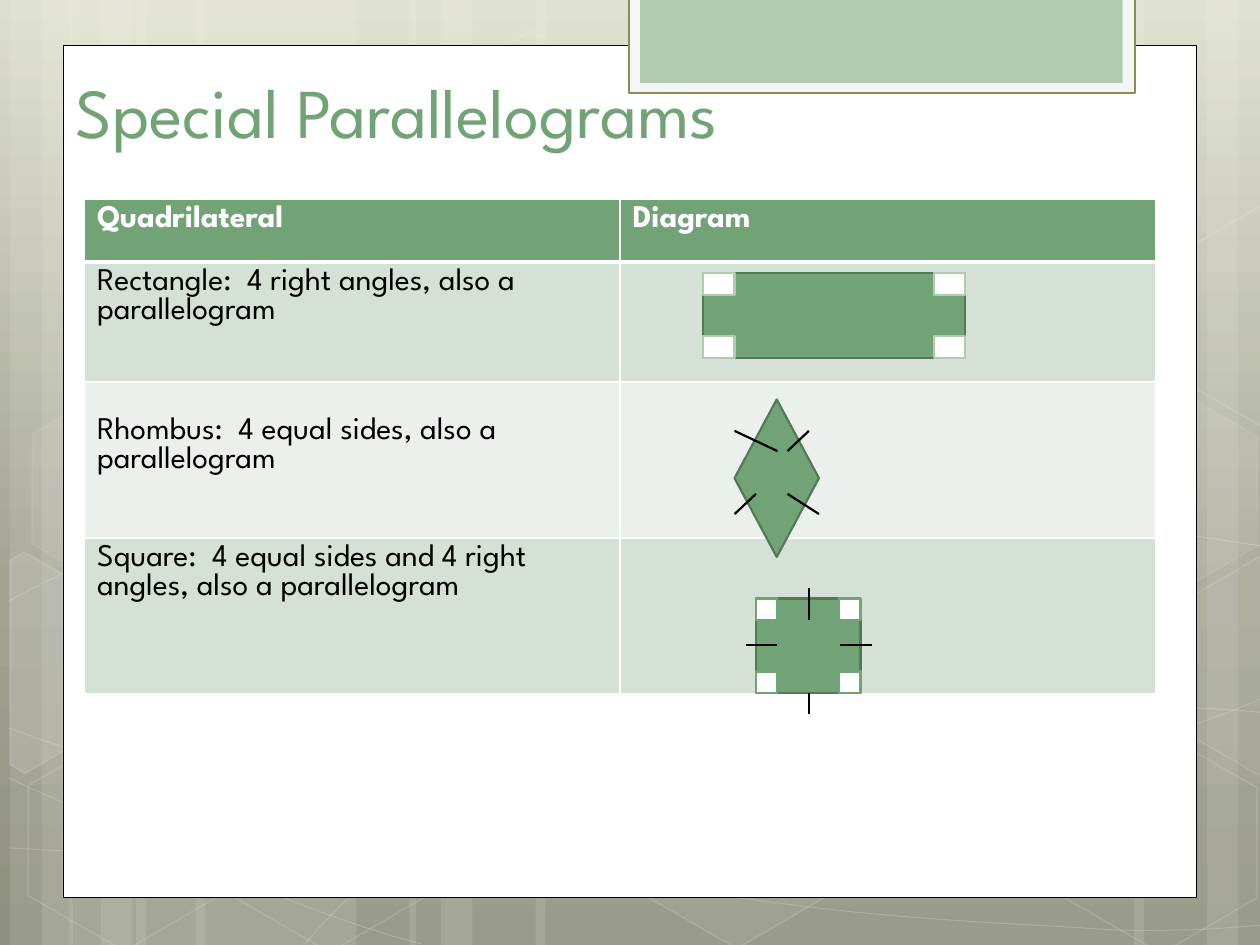
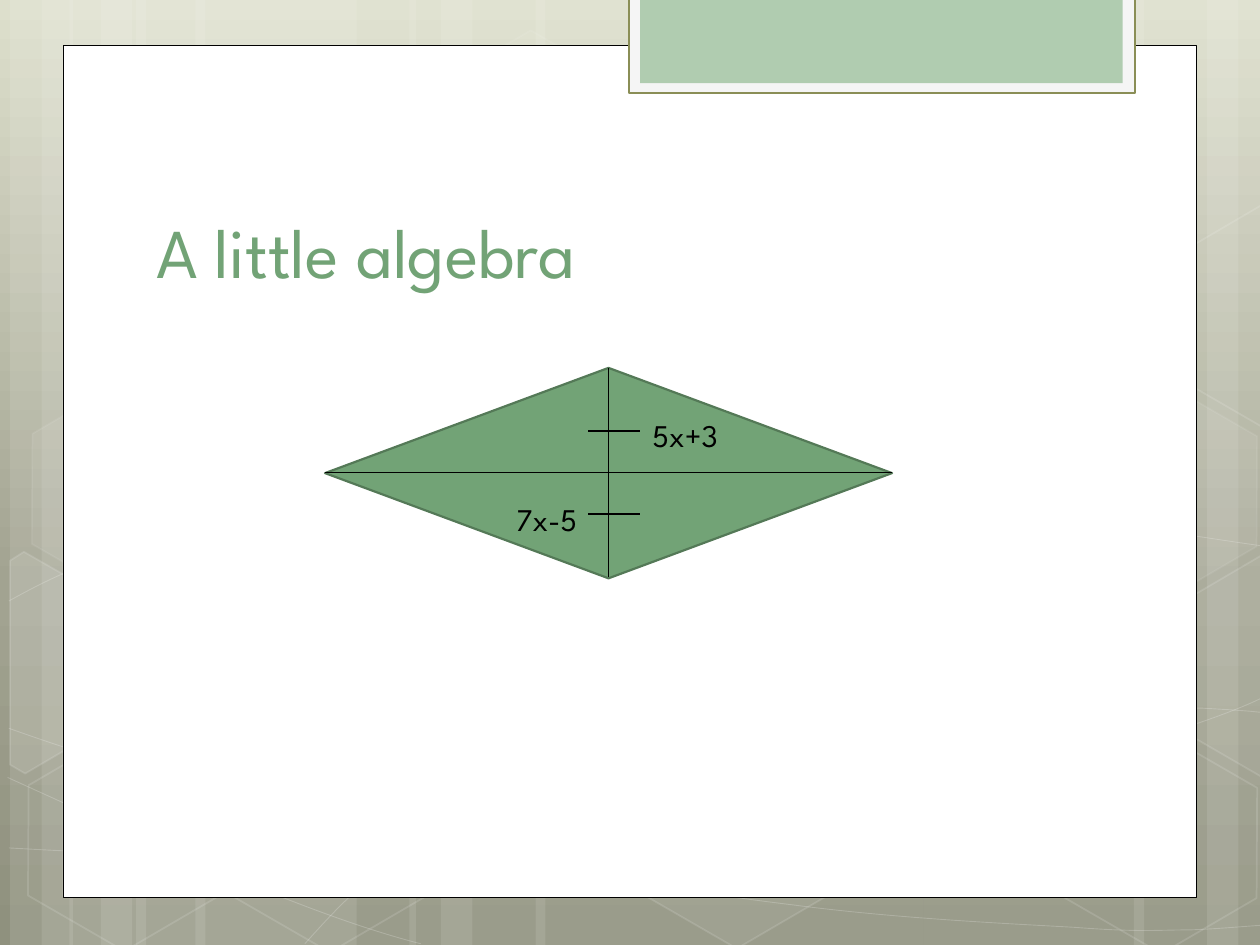
from lxml import etree
from pptx import Presentation
from pptx import util as u
from pptx.dml.color import RGBColor
from pptx.enum import shapes, text
from pptx.oxml.ns import qn

FONT = "League Spartan"
WHITE, BLACK = "FFFFFF", "000000"
GREEN, DARK_GREEN, PALE_GREEN = "72A376", "547957", "B0CCB0"
rgb = RGBColor.from_string
inches = u.Inches
kind = shapes.MSO_SHAPE


def paint(shape, fill=None, line=None, width=1.25, fill_alpha=100, line_alpha=100):
    """Set fill, outline and their opacity in percent; None means no fill or no line."""
    shape.shadow.inherit = False
    for part, colour, alpha, route in (
        (shape.fill, fill, fill_alpha, "a:solidFill"),
        (shape.line.fill, line, line_alpha, "a:ln/a:solidFill"),
    ):
        if colour is None:
            part.background()
            continue
        part.solid()
        part.fore_color.rgb = rgb(colour)
        if alpha < 100:
            value = shape.element.spPr.xpath(route + "/a:srgbClr")[0]
            etree.SubElement(value, qn("a:alpha")).set("val", str(alpha * 1000))
    if line:
        shape.line.width = u.Pt(width)


def write(slide, words, box, size, colour, anchor=text.MSO_ANCHOR.TOP):
    frame = slide.shapes.add_textbox(*map(inches, box)).text_frame
    frame.word_wrap = True
    frame.vertical_anchor = anchor
    paragraph = frame.paragraphs[0]
    paragraph.text = words
    paragraph.font.name = FONT
    paragraph.font.size = u.Pt(size)
    paragraph.font.color.rgb = rgb(colour)


prs = Presentation()
prs.slide_width, prs.slide_height = inches(10), inches(7.5)
blank = prs.slide_layouts[6]
special, algebra = [prs.slides.add_slide(blank) for _ in range(2)]

# Shared background gradient
master = prs.slide_master
master.background.fill.gradient()
master.background.fill.gradient_angle = 270
stops = master.element.find(".//" + qn("a:gsLst"))
for stop in list(stops):
    stops.remove(stop)
for position, colour in ((0, "DDDFCC"), (62, "A2A391"), (100, "8F917E")):
    stop = etree.SubElement(stops, qn("a:gs"), pos=str(position * 1000))
    etree.SubElement(stop, qn("a:srgbClr"), val=colour)

# Shared backdrop: left and width of each translucent stripe
stripes = [
    (1.08, 1.75), (0.08, 0.5), (0.33, 0.83), (1.55, 1.75), (0.55, 0.5), (0.8, 0.83),
    (7.33, 1.75), (9.58, 0.5), (9, 0.83), (4.25, 3.08), (3.25, 0.5), (3.5, 0.83),
]
# Each curve: start point, then straight (x, y) or Bézier segments (two controls and an end)
curves = [
    [(0.07, 6.73), (0.61, 6.76, 1.15, 6.79, 1.9, 6.78), (2.65, 6.77, 3.58, 6.75, 4.58, 6.65),
     (5.58, 6.55, 7, 6.36, 7.92, 6.17), (8.83, 5.98, 9.77, 5.68, 10.07, 5.51)],
    [(0.07, 4.77), (0.36, 4.61, 0.65, 4.46, 1.21, 4.31), (1.78, 4.16, 2.59, 3.94, 3.47, 3.87),
     (4.36, 3.8, 5.44, 3.79, 6.54, 3.87), (7.64, 3.95, 9.47, 4.26, 10.07, 4.34)],
    [(0.06, 6.17), (1.27, 6.72, 2.47, 7.27, 3.34, 7.49)],
    [(0.07, 5.78), (0.38, 5.89, 0.7, 6, 1.28, 6.16), (1.86, 6.31, 2.73, 6.56, 3.57, 6.73),
     (4.4, 6.9, 5.45, 7.08, 6.28, 7.18), (7.11, 7.29, 8, 7.33, 8.53, 7.36),
     (9.05, 7.4, 9.19, 7.38, 9.45, 7.38), (9.71, 7.37, 9.89, 7.35, 10.07, 7.34)],
    [(2.42, 7.49), (2.6, 7.29, 2.78, 7.09, 3.02, 6.91), (3.26, 6.73, 3.6, 6.53, 3.88, 6.39),
     (4.16, 6.25, 4.33, 6.19, 4.7, 6.09), (5.06, 5.99, 5.73, 5.85, 6.08, 5.78),
     (6.44, 5.71, 6.49, 5.71, 6.8, 5.69), (7.11, 5.66, 7.6, 5.63, 7.94, 5.62),
     (8.29, 5.61, 8.86, 5.62, 8.86, 5.62), (9.53, 5.62),
     (9.71, 5.63, 9.88, 5.64, 9.97, 5.65), (10.06, 5.66, 10.03, 5.65, 10.06, 5.66)],
]
# Left, top, fill opacity, line opacity
hexagons = [
    (3.34, 0.36, 4, 8), (4.97, 5.89, 6, 12), (0.11, 5.91, 0, 12), (0.14, 3.12, 7, 8),
    (1.74, 5.92, 0, 12), (7.53, 4.53, 10, 12), (8.34, 5.93, 0, 12), (8.34, 3.14, 7, 8),
]
# Hexagons cut by the slide edge: fill opacity and corners
cut_hexagons = [
    (10, [(0.08, 4.45), (0.19, 4.38), (0.96, 4.82), (0.95, 5.7), (0.2, 6.14), (0.08, 6.07)]),
    (4, [(9.26, 4.85), (10.01, 4.41), (10.09, 4.46), (10.09, 6.13), (10.02, 6.17), (9.26, 5.73)]),
    (0, [(9.26, 2.07), (10.01, 1.63), (10.1, 1.68), (10.09, 3.35), (10.02, 3.39), (9.26, 2.95)]),
]
# Box, fill, line and line width of the page and its tab
panels = [
    ((0.5, 0.36, 9, 6.76), WHITE, BLACK, 0.5),
    ((4.99, -0.02, 4.02, 0.76), "F5F5F5", "8A8E56", 1.25),
    ((5.08, -0.02, 3.83, 0.68), PALE_GREEN, None, 0),
]
# Freeform vertices are whole numbers, so outlines are given in hundredths of an inch
HUNDREDTH = inches(0.01)

for left, width in stripes:
    stripe = special.shapes.add_shape(
        kind.RECTANGLE, inches(left), 0, inches(width), prs.slide_height)
    paint(stripe, WHITE, fill_alpha=10)
for curve in curves:
    points = [(100 * segment[i], 100 * segment[i + 1])
              for segment in curve for i in range(0, len(segment), 2)]
    outline = special.shapes.build_freeform(*points[0], scale=HUNDREDTH)
    outline.add_line_segments(points[1:], close=False)
    strand = outline.convert_to_shape()
    paint(strand, line=WHITE, width=0.5, line_alpha=20)
    steps = iter(strand.element.xpath(".//a:lnTo"))
    for segment in curve[1:]:
        step = next(steps)
        if len(segment) == 6:
            bend = etree.Element(qn("a:cubicBezTo"))
            step.addprevious(bend)
            for control in (step, next(steps), next(steps)):
                bend.append(control[0])
                control.getparent().remove(control)
for left, top, fill_alpha, line_alpha in hexagons:
    hexagon = special.shapes.add_shape(
        kind.HEXAGON, inches(left), inches(top), inches(1.75), inches(1.52))
    hexagon.adjustments[0] = 0.285
    hexagon.rotation = 30
    paint(hexagon, WHITE if fill_alpha else None, WHITE, 1, fill_alpha, line_alpha)
for fill_alpha, corners in cut_hexagons:
    points = [(100 * x, 100 * y) for x, y in corners]
    outline = special.shapes.build_freeform(*points[0], scale=HUNDREDTH)
    outline.add_line_segments(points[1:])
    paint(outline.convert_to_shape(), WHITE if fill_alpha else None, WHITE, 1, fill_alpha, 12)
for box, fill, line, width in panels:
    paint(special.shapes.add_shape(kind.RECTANGLE, *map(inches, box)), fill, line, width)

# Move the backdrop to the master, so that both slides inherit it
for number, part in enumerate(list(special.shapes), start=100):
    part.element.xpath(".//p:cNvPr")[0].set("id", str(number))
    master.element.cSld.spTree.append(part.element)

for slide, title, left, top in (
    (special, "Special Parallelograms", 0.5, 0.01),
    (algebra, "A little algebra", 1.14, 1.12),
):
    write(slide, title, (left, top, 7.68, 1.25), 40, GREEN, text.MSO_ANCHOR.BOTTOM)

# Slide 1: definitions table
definitions = [
    ("Quadrilateral", "Diagram"),
    ("Rectangle:  4 right angles, also a parallelogram", ""),
    ("Rhombus:  4 equal sides, also a parallelogram", ""),
    ("Square:  4 equal sides and 4 right angles, also a parallelogram", ""),
]
row_heights = [0.5, 0.95, 1.24, 1.24]
row_fills = [GREEN, "D5E0D6", "EBF0EC", "D5E0D6"]
table = special.shapes.add_table(
    4, 2, inches(0.67), inches(1.58), inches(8.5), inches(sum(row_heights))).table
for column in table.columns:
    column.width = inches(4.25)
for row, (entries, height, fill) in enumerate(zip(definitions, row_heights, row_fills)):
    table.rows[row].height = inches(height)
    for column, entry in enumerate(entries):
        cell = table.cell(row, column)
        properties = cell._tc.get_or_add_tcPr()
        for side in ("L", "R", "T", "B"):
            under_header = (row, side) in ((0, "B"), (1, "T"))
            border = etree.SubElement(
                properties, qn("a:ln" + side), w=str(u.Pt(3 if under_header else 1)))
            border_fill = etree.SubElement(border, qn("a:solidFill"))
            etree.SubElement(border_fill, qn("a:srgbClr"), val=WHITE)
        cell.fill.solid()
        cell.fill.fore_color.rgb = rgb(fill)
        if row == 2:
            cell.margin_top = inches(0.28)
        paragraph = cell.text_frame.paragraphs[0]
        paragraph.text = entry
        paragraph.font.name = FONT
        paragraph.font.size = u.Pt(18)
        paragraph.font.bold = row == 0
        paragraph.font.color.rgb = rgb(WHITE if row == 0 else BLACK)

# Figures on both slides
rectangle = (5.58, 2.17, 2.08, 0.67)
square = (6, 4.75, 0.83, 0.75)
figures = [
    (special, kind.RECTANGLE, rectangle),
    (special, kind.DIAMOND, (5.83, 3.17, 0.67, 1.25)),
    (special, kind.RECTANGLE, square),
    (algebra, kind.DIAMOND, (2.58, 2.92, 4.5, 1.67)),
]
for slide, preset, box in figures:
    paint(slide.shapes.add_shape(preset, *map(inches, box)), GREEN, DARK_GREEN)

# Right-angle marks in the corners of the rectangle and the square
for (left, top, width, height), mark_width, line in (
    (rectangle, 0.25, PALE_GREEN),
    (square, 0.17, GREEN),
):
    for x in (left, left + width - mark_width):
        for y in (top, top + height - 0.17):
            mark = special.shapes.add_shape(
                kind.RECTANGLE, inches(x), inches(y), inches(mark_width), inches(0.17))
            paint(mark, WHITE, line)

# Equal-side ticks and diagonals
rhombus_ticks = [(5.83, 3.42, 6.17, 3.58), (6, 3.92, 5.83, 4.08),
                 (6.25, 3.92, 6.5, 4.08), (6.25, 3.58, 6.42, 3.42)]
square_ticks = [(6.42, 4.67, 6.42, 4.92), (6.42, 5.5, 6.42, 5.67),
                (5.92, 5.12, 6.17, 5.12), (6.67, 5.12, 6.92, 5.12)]
diagonals = [(4.83, 2.92, 4.83, 4.58), (2.58, 3.75, 7.08, 3.75)]
diagonal_ticks = [(4.67, y, 5.08, y) for y in (3.42, 4.08)]
for slide, width, lines in (
    (special, 1.25, rhombus_ticks),
    (special, 0.75, square_ticks),
    (algebra, 0.75, diagonals + diagonal_ticks),
):
    for ends in lines:
        stroke = slide.shapes.add_connector(
            shapes.MSO_CONNECTOR.STRAIGHT, *map(inches, ends))
        stroke.line.color.rgb = rgb(BLACK)
        stroke.line.width = u.Pt(width)
        etree.SubElement(stroke.element.spPr, qn("a:effectLst"))

write(algebra, "5x+3", (5.08, 3.25, 1.25, 0.4), 18, BLACK)
write(algebra, "7x-5", (4, 3.92, 1, 0.42), 18, BLACK)

prs.save("out.pptx")
